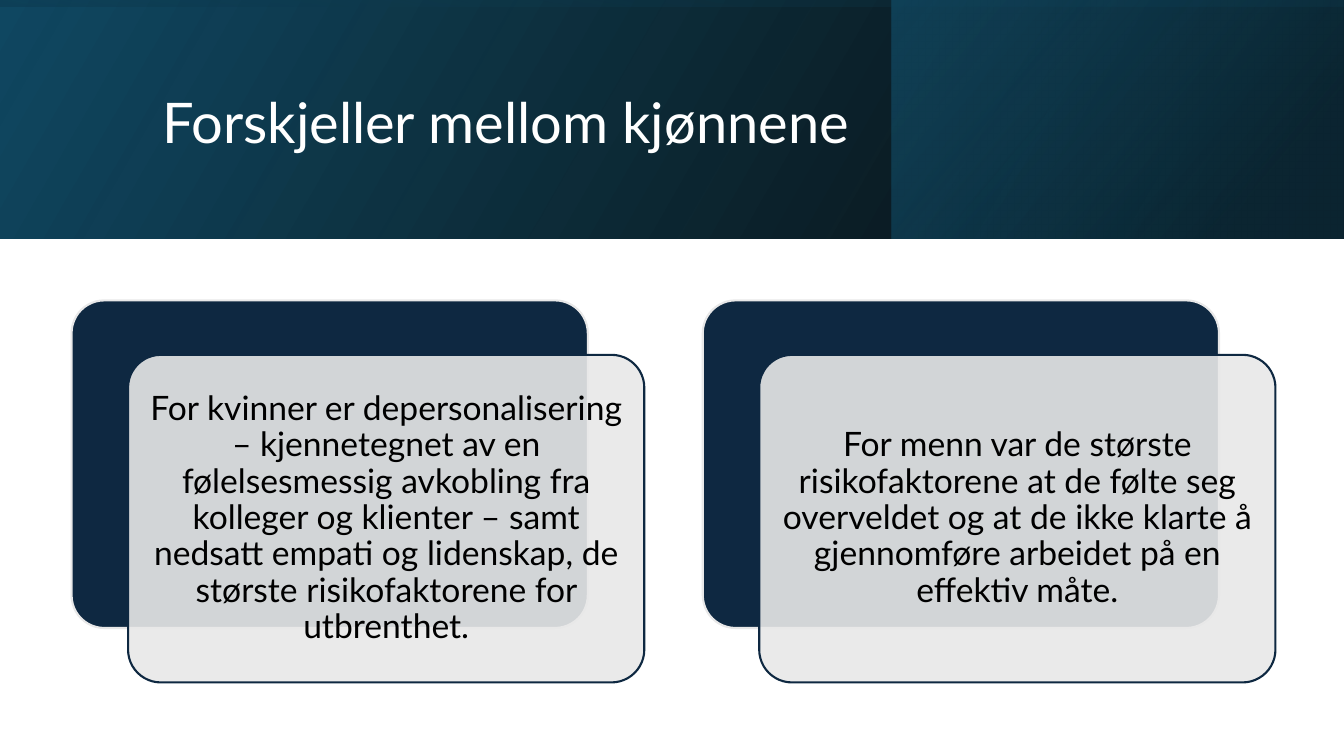
"""Build a slide comparing burnout risk factors for women and men."""
from lxml import etree
from pptx import Presentation
from pptx.dml.color import RGBColor
from pptx.enum.shapes import MSO_SHAPE
from pptx.enum.text import MSO_ANCHOR, MSO_AUTO_SIZE, PP_ALIGN
from pptx.oxml import parse_xml
from pptx.oxml.ns import nsdecls, qn
from pptx.util import Inches, Pt

RECT, ROUND = MSO_SHAPE.RECTANGLE, MSO_SHAPE.ROUNDED_RECTANGLE
MIDDLE, NO_FIT = MSO_ANCHOR.MIDDLE, MSO_AUTO_SIZE.NONE
LEFT, CENTER = PP_ALIGN.LEFT, PP_ALIGN.CENTER
WHITE = RGBColor(0xFF, 0xFF, 0xFF)
BLACK = RGBColor(0x00, 0x00, 0x00)
NAVY = RGBColor(0x0E, 0x28, 0x41)
GRAY = RGBColor(0xE8, 0xE8, 0xE8)
TEAL = RGBColor(0x10, 0x48, 0x62)
DEEP_TEAL = RGBColor(0x0B, 0x30, 0x41)
BLUE = RGBColor(0x15, 0x60, 0x82)
FONT = "Lato"


def add_banner(box, rotation, angle, stops):
    sp = slide.shapes.add_shape(RECT, *[Inches(v) for v in box])
    sp.shadow.inherit = False
    sp.line.fill.background()
    sp.rotation = rotation
    spPr = sp._element.spPr
    spPr.find(qn("a:xfrm")).set("flipH", "1")
    gs = "".join(
        f'<a:gs pos="{pos * 1000}"><a:srgbClr val="{color}">'
        f'<a:alpha val="{alpha * 1000}"/></a:srgbClr></a:gs>'
        for pos, color, alpha in stops)
    spPr.find(qn("a:prstGeom")).addnext(parse_xml(
        f'<a:gradFill {nsdecls("a")} rotWithShape="1"><a:gsLst>{gs}</a:gsLst>'
        f'<a:lin ang="{angle * 60000}" scaled="0"/></a:gradFill>'))


def add_card(x, y, fill, line):
    sp = slide.shapes.add_shape(ROUND, Inches(x), Inches(y), Inches(5.12), Inches(3.25))
    sp.adjustments[0] = 0.1
    sp.shadow.inherit = False
    sp.fill.solid()
    sp.fill.fore_color.rgb = fill
    sp.line.color.rgb = line
    sp.line.width = Pt(1.5)
    return sp


prs = Presentation()
prs.slide_width, prs.slide_height = Inches(13.33), Inches(7.5)
slide = prs.slides.add_slide(prs.slide_layouts[5])

add_banner((0, 0, 13.33, 2.37), 0, 330, [(0, BLACK, 96), (100, TEAL, 100)])
add_banner((8.84, 0, 4.48, 2.37), 0, 320, [(19, DEEP_TEAL, 68), (100, BLUE, 48)])
add_banner((5.48, -5.48, 2.37, 13.33), 270, 350, [(23, TEAL, 16), (99, BLACK, 45)])

title = slide.shapes.title
slide.shapes._spTree.append(title._element)
title.left, title.top = Inches(1.51), Inches(0.38)
title.width, title.height = Inches(10.63), Inches(1.72)
tf = title.text_frame
tf.text = "Forskjeller mellom kjønnene"
tf.auto_size = NO_FIT
tf.vertical_anchor = MIDDLE
p = tf.paragraphs[0]
p.alignment, p.line_spacing = LEFT, 0.9
p.font.name, p.font.size, p.font.color.rgb = FONT, Pt(40), WHITE

findings = [
    "For kvinner er depersonalisering – kjennetegnet av en følelsesmessig "
    "avkobling fra kolleger og klienter – samt nedsatt empati og lidenskap, "
    "de største risikofaktorene for utbrenthet.",
    "For menn var de største risikofaktorene at de følte seg overveldet og "
    "at de ikke klarte å gjennomføre arbeidet på en effektiv måte.",
]
for i, finding in enumerate(findings):
    x = 0.71 + i * 6.26
    add_card(x, 2.98, NAVY, GRAY)
    sp = add_card(x + 0.56, 3.52, GRAY, NAVY)
    color = sp._element.spPr.find(qn("a:solidFill"))[0]
    etree.SubElement(color, qn("a:alpha"), val="90000")
    tf = sp.text_frame
    tf.text = finding
    tf.word_wrap = True
    tf.vertical_anchor = MIDDLE
    tf.margin_left = tf.margin_right = tf.margin_top = tf.margin_bottom = Inches(0.1)
    p = tf.paragraphs[0]
    p.alignment, p.line_spacing = CENTER, 0.9
    p.font.name, p.font.size, p.font.color.rgb = FONT, Pt(24), BLACK

prs.save("out.pptx")
